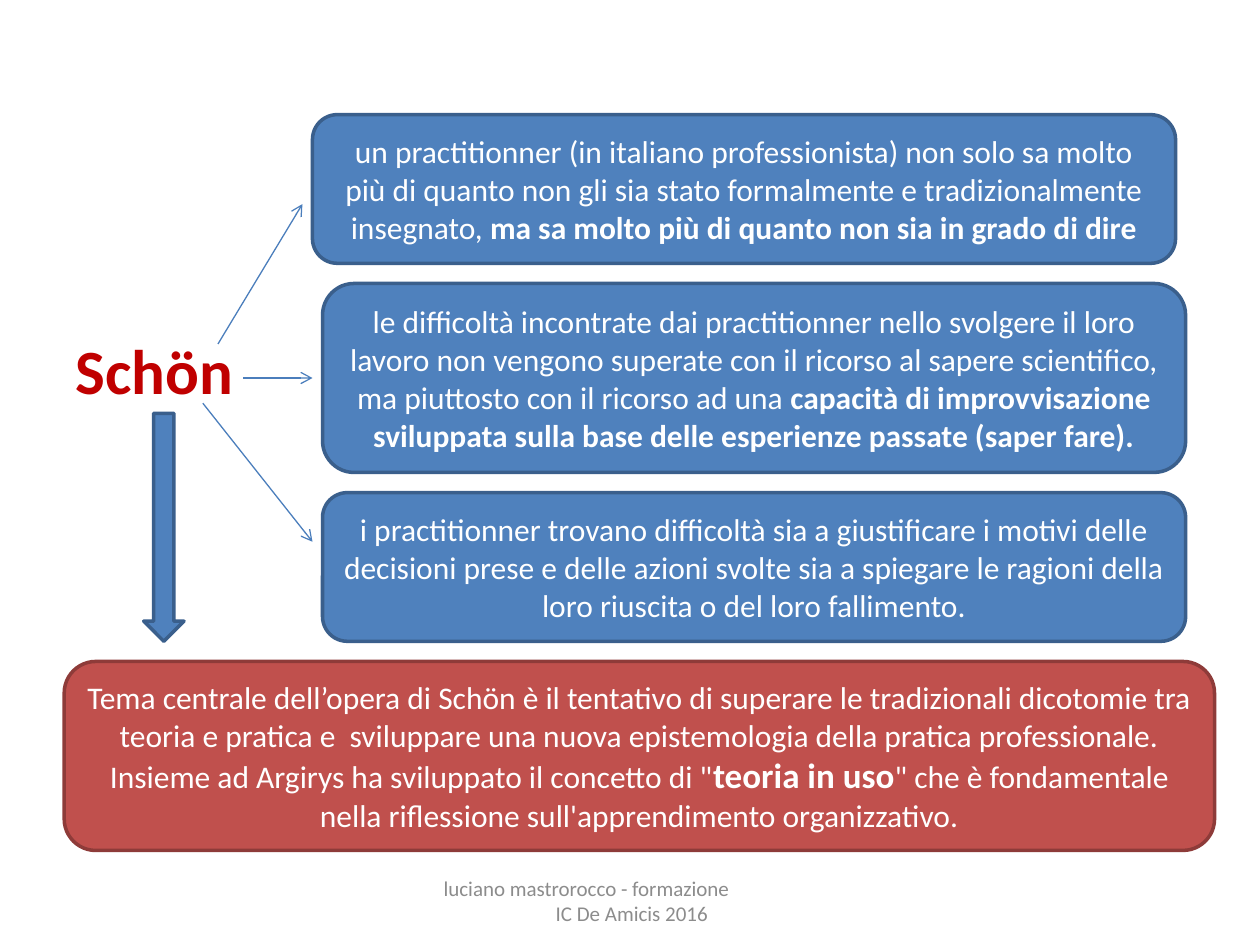
from lxml.etree import SubElement
from pptx import Presentation
from pptx.dml.color import RGBColor
from pptx.enum.shapes import MSO_CONNECTOR, MSO_SHAPE
from pptx.enum.text import MSO_ANCHOR, PP_ALIGN
from pptx.oxml.ns import qn
from pptx.util import Inches, Pt

COLORS = {
    "blue": "4F81BD", "blue edge": "3A5F8C", "arrow": "4B7EBC",
    "red": "C0504D", "red edge": "8E3B39",
    "white": "FFFFFF", "name": "C00000", "footer": "8C8C8C",
}

deck = Presentation()
deck.slide_width, deck.slide_height = Inches(10), Inches(7.5)
slide = deck.slides.add_slide(deck.slide_layouts[6])

# Grid: 100 columns by 100 rows
COL, ROW = deck.slide_width / 100, deck.slide_height / 100


def cells(*numbers):
    """Turn alternating column and row counts into lengths."""
    return [int(n * unit) for n, unit in zip(numbers, (COL, ROW) * 2)]


def write(frame, paragraphs, color, align=PP_ALIGN.CENTER, **frame_format):
    """Fill a frame with paragraphs of (text, size, bold) runs."""
    for key, value in {"word_wrap": True, **frame_format}.items():
        setattr(frame, key, value)
    for number, runs in enumerate(paragraphs):
        line = frame.add_paragraph() if number else frame.paragraphs[0]
        line.alignment = align
        for text, size, bold in runs:
            run = line.add_run()
            run.text = text
            run.font.color.rgb = RGBColor.from_string(COLORS[color])
            for key, value in {"name": "Calibri", "size": Pt(size), "bold": bold}.items():
                setattr(run.font, key, value)


# Author's name, in the body area
body = slide.shapes.add_textbox(*cells(5, 9.07, 90, 80.27))
write(body.text_frame, [[("Schön", 36, True)]], "name", PP_ALIGN.LEFT,
      margin_top=int(26 * ROW))

# Three theses, the conclusion, and the arrow that leads to it
BOX, DOWN = MSO_SHAPE.ROUNDED_RECTANGLE, MSO_SHAPE.DOWN_ARROW
panels = [
    (BOX, (24.8, 12.13, 68.5, 15.73), "blue", [[
        ("un practitionner (in italiano professionista) non solo sa molto più di "
         "quanto non gli sia stato formalmente e tradizionalmente insegnato, ", 18, False),
        ("ma sa molto più di quanto non sia in grado di dire", 18, True)]]),
    (BOX, (25.6, 30, 68.5, 20), "blue", [[
        ("le difficoltà incontrate dai practitionner nello svolgere il loro lavoro non "
         "vengono superate con il ricorso al sapere scientifico, ma piuttosto con il "
         "ricorso ad una ", 18, False),
        ("capacità di improvvisazione sviluppata sulla base delle esperienze passate "
         "(saper fare).", 18, True)]]),
    (BOX, (25.6, 52.13, 68.5, 15.73), "blue", [
        [("i practitionner trovano difficoltà sia a giustificare i motivi delle", 18, False)],
        [("decisioni prese e delle azioni svolte sia a spiegare le ragioni della loro "
          "riuscita o del loro fallimento.", 18, False)]]),
    (BOX, (5.1, 70, 91.3, 20), "red", [[
        ("Tema centrale dell’opera di Schön è il tentativo di superare le tradizionali "
         "dicotomie tra teoria e pratica e  sviluppare una nuova epistemologia della "
         "pratica professionale. Insieme ad Argirys ha sviluppato il concetto di \"",
         18, False),
        ("teoria in uso", 20, True),
        ("\" che è fondamentale nella riflessione sull'apprendimento organizzativo.",
         18, False)]]),
    (DOWN, (11.4, 43.73, 3.2, 24.13), "blue", []),
]
for outline, place, color, paragraphs in panels:
    panel = slide.shapes.add_shape(outline, *cells(*place))
    panel.shadow.inherit = False
    panel.fill.solid()
    panel.fill.fore_color.rgb = RGBColor.from_string(COLORS[color])
    panel.line.color.rgb = RGBColor.from_string(COLORS[color + " edge"])
    panel.line.width = Pt(2)
    write(panel.text_frame, paragraphs, "white", vertical_anchor=MSO_ANCHOR.MIDDLE)

# Thin arrows from the name to each thesis
for ends in [(17.3, 36.4, 24, 21.6), (19.3, 40, 24.8, 40), (16.1, 42.67, 24.8, 57.33)]:
    pointer = slide.shapes.add_connector(MSO_CONNECTOR.STRAIGHT, *cells(*ends))
    pointer.line.color.rgb = RGBColor.from_string(COLORS["arrow"])
    pointer.line.width = Pt(0.75)
    SubElement(pointer.line._get_or_add_ln(), qn("a:tailEnd"), type="arrow")
    SubElement(pointer._element.spPr, qn("a:effectLst"))

# Footer: the second line is indented
footer = slide.shapes.add_textbox(*cells(34.2, 92.67, 31.7, 5.33))
write(footer.text_frame,
      [[("luciano mastrorocco - formazione", 12, False)], [("IC De Amicis 2016", 12, False)]],
      "footer", vertical_anchor=MSO_ANCHOR.MIDDLE, margin_left=0, margin_right=int(7 * COL))
footer.text_frame.paragraphs[1]._p.get_or_add_pPr().set("marL", str(int(7.2 * COL)))

deck.save("out.pptx")
